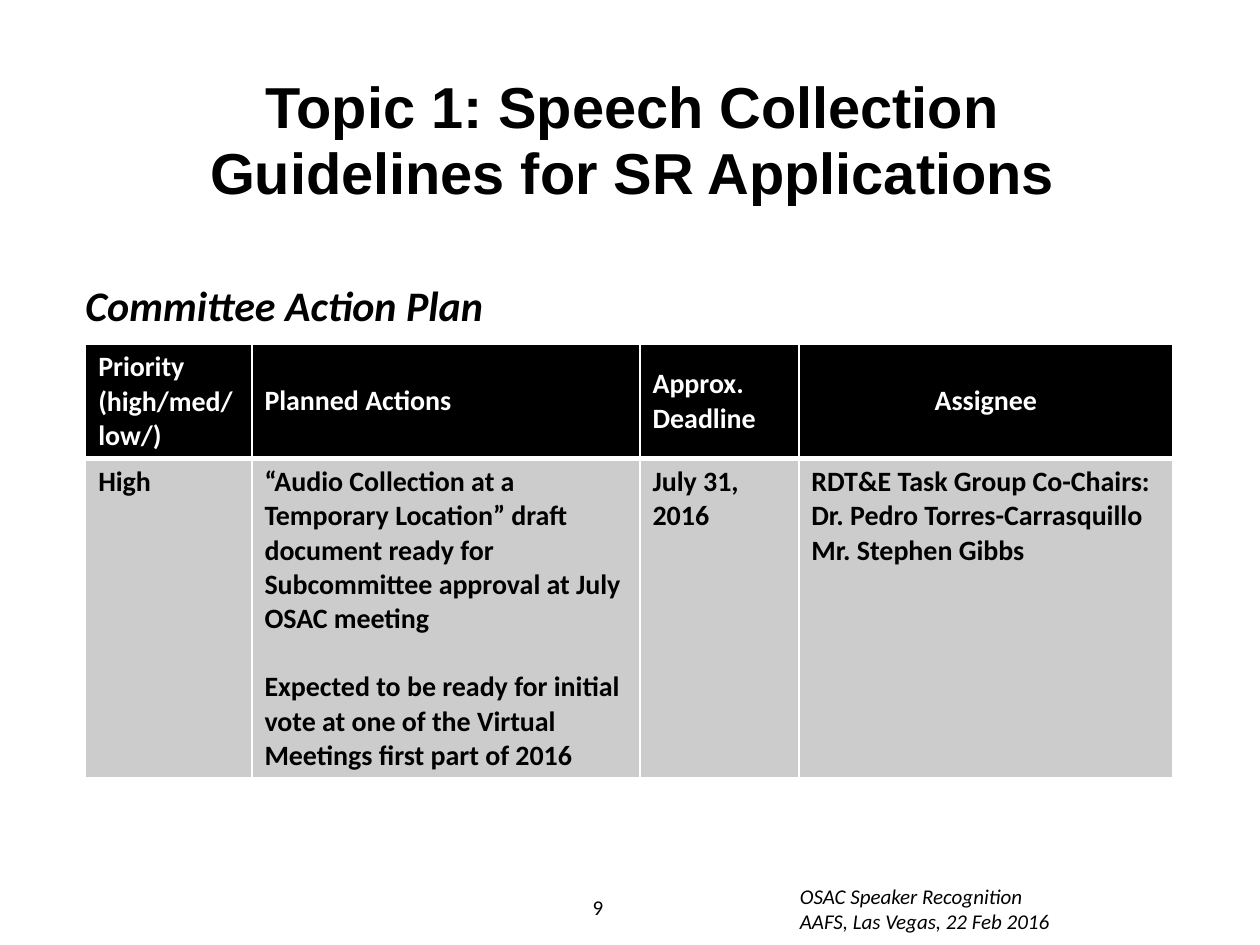
import dataclasses
import typing

import lxml.etree
import pptx
import pptx.dml.color
import pptx.enum.text
import pptx.oxml.ns
import pptx.util

Inches = pptx.util.Inches
Pt = pptx.util.Pt
Align = pptx.enum.text.PP_ALIGN
Anchor = pptx.enum.text.MSO_ANCHOR


@dataclasses.dataclass(frozen=True)
class Theme:
    heading_font: str = "Arial"
    body_font: str = "Calibri"
    ink: str = "000000"
    paper: str = "FFFFFF"
    row_fill: str = "CCCCCC"
    title_size: float = 33
    subtitle_size: float = 24
    table_size: float = 16
    footer_size: float = 12
    thin_rule: float = 1
    thick_rule: float = 3


THEME = Theme()


@dataclasses.dataclass(frozen=True)
class TextStyle:
    size: float
    font: str = THEME.body_font
    color: str = THEME.ink
    bold: bool = False
    italic: bool = False
    align: Align = Align.LEFT
    line_spacing: typing.Optional[float] = None
    gap: float = 0


@dataclasses.dataclass(frozen=True)
class Label:
    left: float
    top: float
    width: float
    height: float
    lines: tuple[str, ...]
    style: TextStyle
    wrap: bool = True


@dataclasses.dataclass(frozen=True)
class Column:
    width: float
    heading: str
    entry: tuple[str, ...]
    heading_align: Align = Align.LEFT
    entry_gap: float = 0


LABELS = (
    Label(6.25, 6.96, 2.2, 0.5,
          ("OSAC Speaker Recognition", "AAFS, Las Vegas, 22 Feb 2016"),
          TextStyle(THEME.footer_size, italic=True), wrap=False),
    Label(1.41, 0.55, 7.22, 1.45,
          ("Topic 1: Speech Collection Guidelines for SR Applications",),
          TextStyle(THEME.title_size, THEME.heading_font, bold=True,
                    align=Align.CENTER, line_spacing=0.95)),
    Label(3.62, 7.05, 2.25, 0.4, ("9",),
          TextStyle(THEME.footer_size, align=Align.CENTER)),
    Label(0.58, 2.17, 3.42, 0.5, ("Committee Action Plan",),
          TextStyle(THEME.subtitle_size, bold=True, italic=True), wrap=False),
)

COLUMNS = (
    Column(1.32, "Priority (high/med/low/)", ("High",)),
    Column(3.08, "Planned Actions",
           ("“Audio Collection at a Temporary Location” draft document ready "
            "for Subcommittee approval at July OSAC meeting",
            "Expected to be ready for initial vote at one of the Virtual "
            "Meetings first part of 2016"), entry_gap=19.5),
    Column(1.26, "Approx. Deadline", ("July 31, 2016",)),
    Column(2.97, "Assignee",
           ("RDT&E Task Group Co-Chairs:", "Dr. Pedro Torres-Carrasquillo",
            "Mr. Stephen Gibbs"), heading_align=Align.CENTER),
)
ROW_HEIGHTS = (0.91, 2.53)


def rgb(color: str) -> pptx.dml.color.RGBColor:
    return pptx.dml.color.RGBColor.from_string(color)


def write_lines(tf, lines: tuple[str, ...], style: TextStyle) -> None:
    for i, line in enumerate(lines):
        p = tf.add_paragraph() if i else tf.paragraphs[0]
        p.text = line
        p.alignment = style.align
        if style.line_spacing:
            p.line_spacing = style.line_spacing
        if i and style.gap:
            p.space_before = Pt(style.gap)
        p.font.name = style.font
        p.font.size = Pt(style.size)
        p.font.bold = style.bold
        p.font.italic = style.italic
        p.font.color.rgb = rgb(style.color)


def add_label(slide, label: Label) -> None:
    box = slide.shapes.add_textbox(Inches(label.left), Inches(label.top),
                                   Inches(label.width), Inches(label.height))
    tf = box.text_frame
    tf.word_wrap = label.wrap
    write_lines(tf, label.lines, label.style)


def set_borders(cell, top: float, bottom: float) -> None:
    qn = pptx.oxml.ns.qn
    tc_pr = cell._tc.get_or_add_tcPr()
    widths = {"L": THEME.thin_rule, "R": THEME.thin_rule, "T": top, "B": bottom}
    for side, width in widths.items():
        ln = lxml.etree.SubElement(tc_pr, qn(f"a:ln{side}"), w=str(Pt(width)))
        fill = lxml.etree.SubElement(ln, qn("a:solidFill"))
        lxml.etree.SubElement(fill, qn("a:srgbClr"), val=THEME.paper)


def fill_cell(cell, lines: tuple[str, ...], style: TextStyle, fill: str,
              anchor: Anchor, top: float, bottom: float) -> None:
    set_borders(cell, top, bottom)
    cell.fill.solid()
    cell.fill.fore_color.rgb = rgb(fill)
    cell.vertical_anchor = anchor
    write_lines(cell.text_frame, lines, style)


def add_action_table(slide, left: float, top: float) -> None:
    width = sum(column.width for column in COLUMNS)
    table = slide.shapes.add_table(
        len(ROW_HEIGHTS), len(COLUMNS), Inches(left), Inches(top),
        Inches(width), Inches(sum(ROW_HEIGHTS))).table
    for row, height in zip(table.rows, ROW_HEIGHTS):
        row.height = Inches(height)
    for i, column in enumerate(COLUMNS):
        table.columns[i].width = Inches(column.width)
        heading = TextStyle(THEME.table_size, color=THEME.paper, bold=True,
                            align=column.heading_align)
        entry = TextStyle(THEME.table_size, bold=True, gap=column.entry_gap)
        fill_cell(table.cell(0, i), (column.heading,), heading, THEME.ink,
                  Anchor.MIDDLE, THEME.thin_rule, THEME.thick_rule)
        fill_cell(table.cell(1, i), column.entry, entry, THEME.row_fill,
                  Anchor.TOP, THEME.thick_rule, THEME.thin_rule)


def main() -> None:
    prs = pptx.Presentation()
    prs.slide_width = Inches(10)
    prs.slide_height = Inches(7.5)
    slide = prs.slides.add_slide(prs.slide_layouts[6])
    for label in LABELS:
        add_label(slide, label)
    add_action_table(slide, 0.68, 2.73)
    prs.save("out.pptx")


if __name__ == "__main__":
    main()
